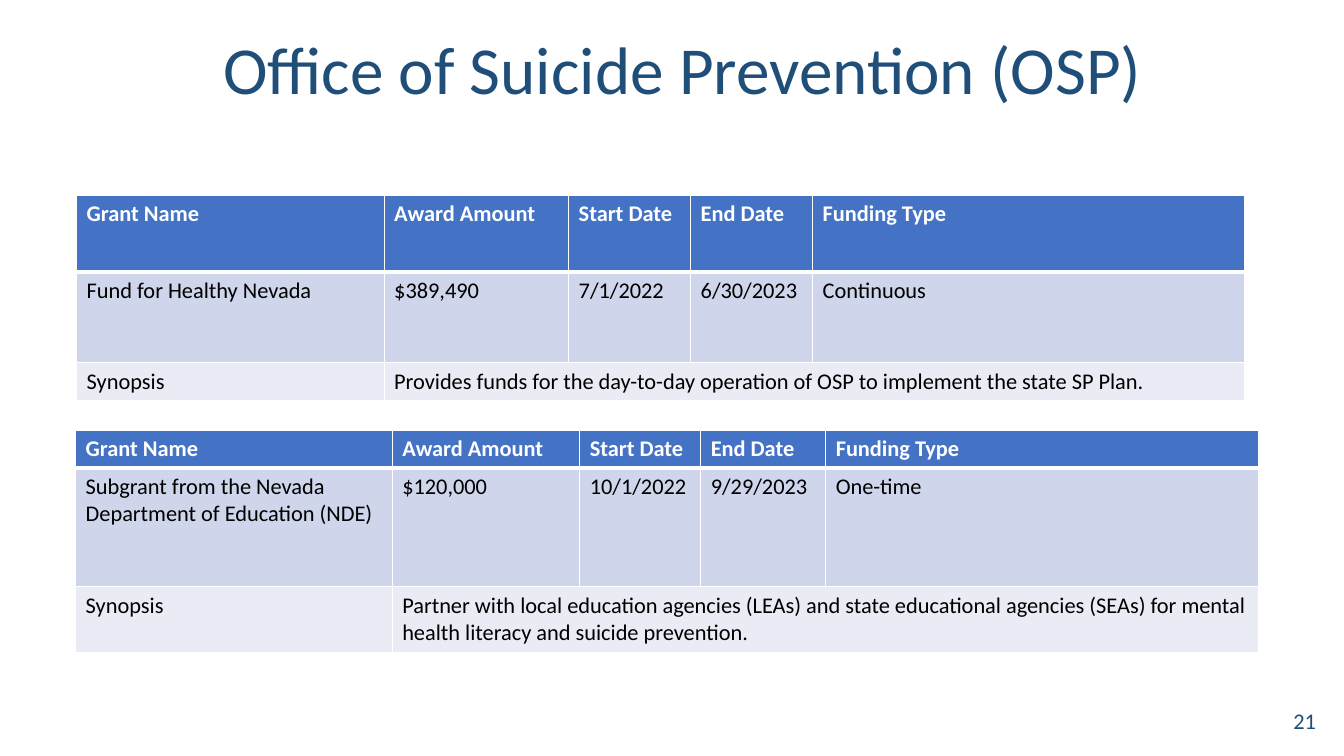
from dataclasses import dataclass

from lxml.etree import SubElement
from pptx import Presentation
from pptx.dml.color import RGBColor
from pptx.enum.text import MSO_ANCHOR, PP_ALIGN
from pptx.oxml.ns import qn
from pptx.slide import Slide
from pptx.table import _Cell as Cell
from pptx.text.text import _Paragraph as Paragraph
from pptx.util import Emu, Pt

EMU_PER_PX = 9144  # 100 px to the inch
FONT = "Calibri"
COLORS = {
    "title": "1F4E79",
    "header": "4472C4",
    "award": "CFD5EA",
    "synopsis": "E9EBF5",
    "white": "FFFFFF",
    "black": "000000",
}


@dataclass
class Label:
    text: str
    box: tuple[int, int, int, int]
    size: int
    align: PP_ALIGN
    line_spacing: float


@dataclass
class Grant:
    left: int
    top: int
    columns: list[int]
    rows: list[int]
    award: list[str]
    synopsis: str


HEADINGS = ["Grant Name", "Award Amount", "Start Date", "End Date", "Funding Type"]

LABELS = [
    Label("Office of Suicide Prevention (OSP)", (39, 0, 1276, 145), 48, PP_ALIGN.CENTER, 0.9),
    Label("21", (1015, 695, 300, 40), 16, PP_ALIGN.RIGHT, 1.0),
]

GRANTS = [
    Grant(
        75, 427, [314, 186, 120, 124, 429], [37, 118, 65],
        ["Subgrant from the Nevada Department of Education (NDE)",
         "$120,000", "10/1/2022", "9/29/2023", "One-time"],
        "Partner with local education agencies (LEAs) and state educational agencies (SEAs) "
        "for mental health literacy and suicide prevention.",
    ),
    Grant(
        76, 194, [305, 183, 121, 121, 428], [76, 90, 37],
        ["Fund for Healthy Nevada", "$389,490", "7/1/2022", "6/30/2023", "Continuous"],
        "Provides funds for the day-to-day operation of OSP to implement the state SP Plan.",
    ),
]


def px(length: int) -> Emu:
    return Emu(length * EMU_PER_PX)


def add_run(paragraph: Paragraph, text: str, size: int, color: str, bold: bool = False) -> None:
    run = paragraph.add_run()
    run.text = text
    run.font.name = FONT
    run.font.size = Pt(size)
    run.font.bold = bold
    run.font.color.rgb = RGBColor.from_string(COLORS[color])


def add_label(slide: Slide, label: Label) -> None:
    frame = slide.shapes.add_textbox(*map(px, label.box)).text_frame
    frame.word_wrap = True
    frame.vertical_anchor = MSO_ANCHOR.MIDDLE
    paragraph = frame.paragraphs[0]
    paragraph.alignment = label.align
    paragraph.line_spacing = label.line_spacing
    add_run(paragraph, label.text, label.size, "title")


def add_borders(cell: Cell, top: int, bottom: int) -> None:
    properties = cell._tc.get_or_add_tcPr()
    for side, width in (("L", 1), ("R", 1), ("T", top), ("B", bottom)):
        line = SubElement(properties, qn(f"a:ln{side}"), w=str(Pt(width)))
        fill = SubElement(line, qn("a:solidFill"))
        SubElement(fill, qn("a:srgbClr"), val=COLORS["white"])


def add_grant(slide: Slide, grant: Grant) -> None:
    table = slide.shapes.add_table(
        len(grant.rows), len(grant.columns), px(grant.left), px(grant.top),
        px(sum(grant.columns)), px(sum(grant.rows)),
    ).table
    for column, width in zip(table.columns, grant.columns):
        column.width = px(width)
    for row, height in zip(table.rows, grant.rows):
        row.height = px(height)

    # Fill, borders and text by row; a thick rule sits under the header
    contents = [HEADINGS, grant.award, ["Synopsis", grant.synopsis]]
    fills = ["header", "award", "synopsis"]
    rules = [1, 3, 1, 1]
    for row_index, (texts, fill) in enumerate(zip(contents, fills)):
        is_header = row_index == 0
        for cell in table.rows[row_index].cells:
            add_borders(cell, rules[row_index], rules[row_index + 1])
            cell.fill.solid()
            cell.fill.fore_color.rgb = RGBColor.from_string(COLORS[fill])
        for column_index, text in enumerate(texts):
            paragraph = table.cell(row_index, column_index).text_frame.paragraphs[0]
            add_run(paragraph, text, 16, "white" if is_header else "black", is_header)

    # The synopsis spans every column but the first
    table.cell(2, 1).merge(table.cell(2, len(grant.columns) - 1))


def main() -> None:
    presentation = Presentation()
    presentation.slide_width = px(1333)
    presentation.slide_height = px(750)
    slide = presentation.slides.add_slide(presentation.slide_layouts[6])
    for label in LABELS:
        add_label(slide, label)
    for grant in GRANTS:
        add_grant(slide, grant)
    presentation.save("out.pptx")


if __name__ == "__main__":
    main()
